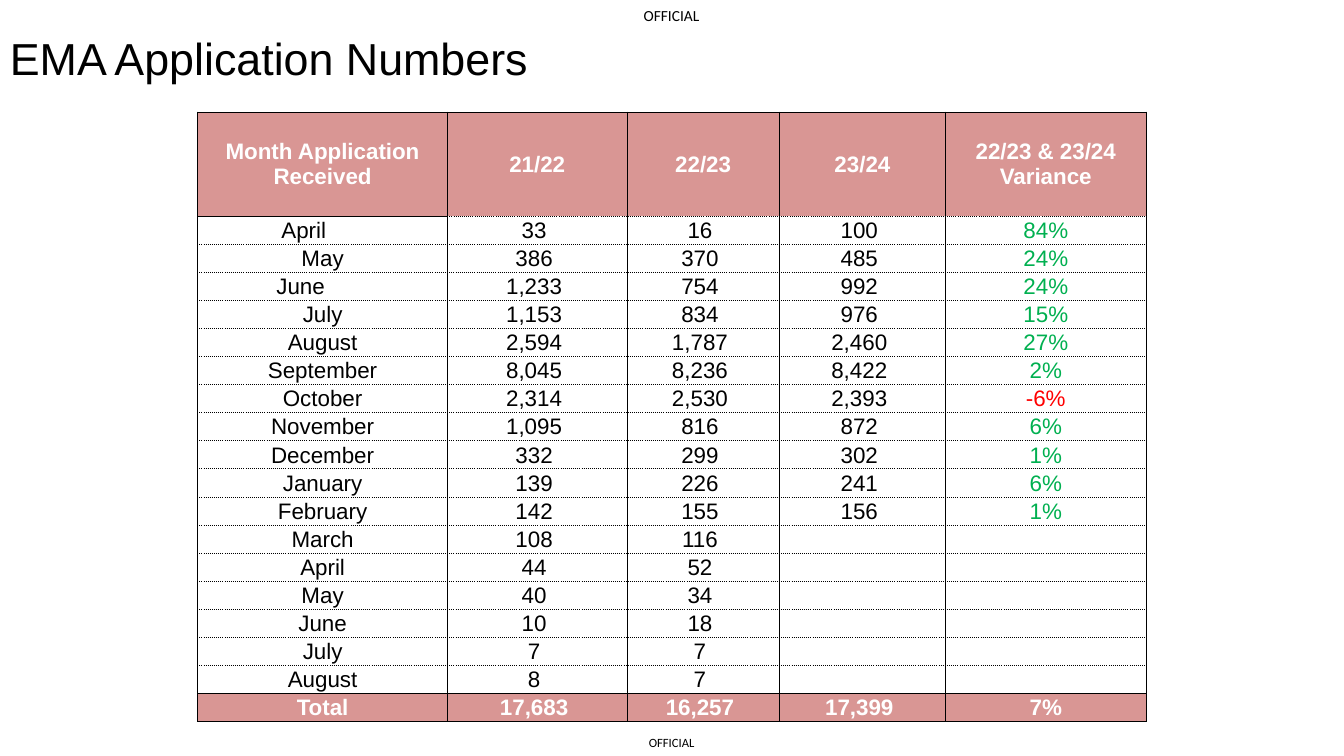
import pptx
import pptx.dml.color
import pptx.enum.text
import pptx.oxml
import pptx.oxml.ns
import pptx.util
from pptx.dml.color import RGBColor
from pptx.enum.text import MSO_ANCHOR, PP_ALIGN
from pptx.util import Cm

BLACK = RGBColor(0x00, 0x00, 0x00)
WHITE = RGBColor(0xFF, 0xFF, 0xFF)
ROSE = RGBColor(0xD9, 0x96, 0x94)
GREEN = RGBColor(0x00, 0xB0, 0x50)
RED = RGBColor(0xFF, 0x00, 0x00)

HEADINGS = ["Month Application Received", "21/22", "22/23", "23/24",
            "22/23 & 23/24 Variance"]
MONTHS = [
    ["April", "33", "16", "100", "84%"],
    ["May", "386", "370", "485", "24%"],
    ["June", "1,233", "754", "992", "24%"],
    ["July", "1,153", "834", "976", "15%"],
    ["August", "2,594", "1,787", "2,460", "27%"],
    ["September", "8,045", "8,236", "8,422", "2%"],
    ["October", "2,314", "2,530", "2,393", "-6%"],
    ["November", "1,095", "816", "872", "6%"],
    ["December", "332", "299", "302", "1%"],
    ["January", "139", "226", "241", "6%"],
    ["February", "142", "155", "156", "1%"],
    ["March", "108", "116", "", ""],
    ["April", "44", "52", "", ""],
    ["May", "40", "34", "", ""],
    ["June", "10", "18", "", ""],
    ["July", "7", "7", "", ""],
    ["August", "8", "7", "", ""],
]
TOTALS = ["Total", "17,683", "16,257", "17,399", "7%"]

COLUMN_WIDTHS = [6.3, 4.52, 3.84, 4.19, 5.05]
TABLE_HEIGHT = 15.32
HEADING_HEIGHT = 2.62
CELL_MARGIN = 0.03
# Right margins that move centred text to the left: (row, column) -> cm
MONTH_SHIFTS = {(1, 0): 0.95, (3, 0): 1.11}
NUMBER_SHIFT = 0.16


def write_text(frame, text, size=16, font="Arial", color=BLACK, bold=False,
               align=PP_ALIGN.CENTER):
    paragraph = frame.paragraphs[0]
    paragraph.alignment = align
    if not text:
        # An empty cell still needs its text size, or its row grows.
        paragraph._p.append(pptx.oxml.parse_xml(
            f'<a:endParaRPr {pptx.oxml.ns.nsdecls("a")} sz="{size * 100}">'
            f'<a:latin typeface="{font}"/></a:endParaRPr>'))
        return
    run = paragraph.add_run()
    run.text = text
    run.font.size = pptx.util.Pt(size)
    run.font.name = font
    run.font.bold = bold
    run.font.color.rgb = color


def add_label(slide, text, left, top, width, height, margin=None,
              anchor=MSO_ANCHOR.MIDDLE, **text_format):
    frame = slide.shapes.add_textbox(
        Cm(left), Cm(top), Cm(width), Cm(height)).text_frame
    frame.word_wrap = False
    frame.vertical_anchor = anchor
    if margin is not None:
        frame.margin_left = frame.margin_right = Cm(margin)
        frame.margin_top = frame.margin_bottom = Cm(margin)
    write_text(frame, text, **text_format)


def set_borders(cell, top, bottom):
    """Draw solid sides, and a top and bottom in the given dash styles."""
    dashes = {"lnL": "solid", "lnR": "solid", "lnT": top, "lnB": bottom}
    for edge, dash in dashes.items():
        cell._tc.get_or_add_tcPr().append(pptx.oxml.parse_xml(
            f'<a:{edge} {pptx.oxml.ns.nsdecls("a")} w="6350">'
            f'<a:solidFill><a:srgbClr val="{BLACK}"/></a:solidFill>'
            f'<a:prstDash val="{dash}"/></a:{edge}>'))


def text_color(text, is_band, is_variance):
    if is_band:
        return WHITE
    if is_variance:
        return RED if text.startswith("-") else GREEN
    return BLACK


def right_margin(row, column):
    is_number = row > 0 and 0 < column < len(HEADINGS) - 1
    shift = NUMBER_SHIFT if is_number else MONTH_SHIFTS.get((row, column), 0)
    return Cm(CELL_MARGIN + shift)


def add_applications_table(slide, left, top):
    rows = [HEADINGS, *MONTHS, TOTALS]
    last = len(rows) - 1
    table = slide.shapes.add_table(
        len(rows), len(HEADINGS), Cm(left), Cm(top),
        Cm(sum(COLUMN_WIDTHS)), Cm(TABLE_HEIGHT)).table
    table.first_row = table.horz_banding = False
    for column, width in zip(table.columns, COLUMN_WIDTHS):
        column.width = Cm(width)
    for row in table.rows:
        row.height = Cm((TABLE_HEIGHT - HEADING_HEIGHT) / last)
    table.rows[0].height = Cm(HEADING_HEIGHT)

    for r, values in enumerate(rows):
        is_band = r in (0, last)
        for c, text in enumerate(values):
            cell = table.cell(r, c)
            cell.vertical_anchor = MSO_ANCHOR.MIDDLE
            cell.margin_left = cell.margin_top = Cm(CELL_MARGIN)
            cell.margin_right = right_margin(r, c)
            cell.margin_bottom = 0
            solid_top = is_band or (r == 1 and c == 0)
            solid_bottom = r >= last - 1 or (r == 0 and c == 0)
            set_borders(cell, "solid" if solid_top else "sysDot",
                        "solid" if solid_bottom else "sysDot")
            if is_band:
                cell.fill.solid()
                cell.fill.fore_color.rgb = ROSE
            else:
                cell.fill.background()
            write_text(cell.text_frame, text, bold=is_band,
                       color=text_color(text, is_band, c == len(values) - 1))


def main():
    deck = pptx.Presentation()
    deck.slide_width = Cm(33.87)
    deck.slide_height = Cm(19.05)
    slide = deck.slides.add_slide(deck.slide_layouts[6])
    add_label(slide, "OFFICIAL", 16.0, 18.36, 1.85, 0.69, margin=0,
              size=9, font="Calibri")
    add_label(slide, "OFFICIAL", 15.82, 0, 2.21, 0.79, margin=0,
              size=11, font="Calibri")
    add_label(slide, "EMA Application Numbers", 0, 0.64, 13.69, 1.63,
              anchor=MSO_ANCHOR.TOP, size=32, align=PP_ALIGN.LEFT)
    add_applications_table(slide, 4.98, 2.82)
    deck.save("out.pptx")


if __name__ == "__main__":
    main()
